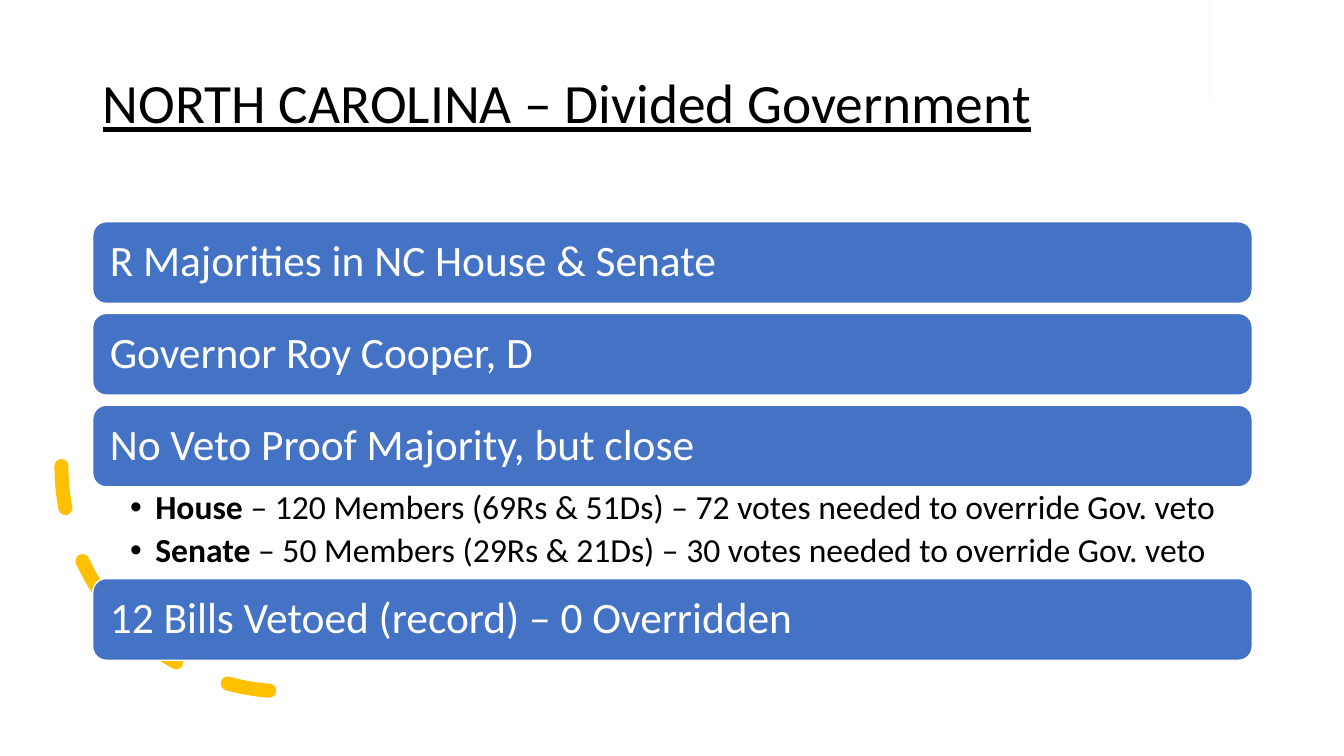
import math

import pptx
import pptx.dml.color
import pptx.enum.dml
import pptx.enum.shapes
import pptx.enum.text
import pptx.oxml
import pptx.util

Inches = pptx.util.Inches
Pt = pptx.util.Pt
ANCHOR = pptx.enum.text.MSO_ANCHOR
SHAPES = pptx.enum.shapes.MSO_SHAPE
GOLD, BLUE, WHITE, BLACK = "FFC000", "4472C4", "FFFFFF", "000000"

# Column and row grid in inches
LEFT, WIDTH = 0.92, 11.5
FIRST_ROW, ROW_PITCH, BAR_HEIGHT = 2.2, 0.91, 0.81


def color(hex_string):
    return pptx.dml.color.RGBColor.from_string(hex_string)


def write_text(paragraph, text, size, fill, bold=False, underline=False):
    paragraph.alignment = pptx.enum.text.PP_ALIGN.LEFT
    paragraph.line_spacing = 0.9
    paragraph.space_before = Pt(0)
    run = paragraph.add_run()
    run.text = text
    run.font.name = "Calibri"
    run.font.size = Pt(size)
    run.font.bold = bold
    run.font.underline = underline
    run.font.color.rgb = color(fill)


presentation = pptx.Presentation()
presentation.slide_width = Inches(13.33)
presentation.slide_height = Inches(7.5)
slide = presentation.slides.add_slide(presentation.slide_layouts[1])
title, body = slide.placeholders

# Title
title.left, title.top = Inches(LEFT), Inches(0.25)
title.width, title.height = Inches(WIDTH), Inches(1.6)
title.text_frame.vertical_anchor = ANCHOR.MIDDLE
title.text_frame.auto_size = pptx.enum.text.MSO_AUTO_SIZE.NONE
write_text(title.text_frame.paragraphs[0], "NORTH CAROLINA – Divided Government",
           size=39.6, fill=BLACK, underline=True)

# Gold disc cut off by the top edge
center_x, center_y, radius = 11.79, -0.11, 0.63
edge = math.asin(-center_y / radius)
steps = 60
angles = [edge + (math.pi - 2 * edge) * step / steps for step in range(steps + 1)]
points = [(center_x + radius * math.cos(angle), center_y + radius * math.sin(angle))
          for angle in angles]
builder = slide.shapes.build_freeform(*points[0], scale=Inches(1))
builder.add_line_segments(points[1:], close=True)
disc = builder.convert_to_shape()
disc.shadow.inherit = False
disc.fill.solid()
disc.fill.fore_color.rgb = color(GOLD)
disc.line.fill.background()

# Dashed arc in the lower left corner
arc = slide.shapes.add_shape(SHAPES.ARC, Inches(0.61), Inches(2.39), Inches(4.47), Inches(4.47))
arc.shadow.inherit = False
arc.rotation = 90
arc.element.spPr.xfrm.set("flipV", "1")
arc.fill.background()
arc.line.color.rgb = color(GOLD)
arc.line.width = Pt(10)
arc.line.dash_style = pptx.enum.dml.MSO_LINE.DASH
arc.line._get_or_add_ln().set("cap", "rnd")

# Blue bars: three rows, then one below the bullet list
list_top = FIRST_ROW + 2 * ROW_PITCH + BAR_HEIGHT
bars = [
    (FIRST_ROW, "R Majorities in NC House & Senate"),
    (FIRST_ROW + ROW_PITCH, "Governor Roy Cooper, D"),
    (FIRST_ROW + 2 * ROW_PITCH, "No Veto Proof Majority, but close"),
    (list_top + ROW_PITCH, "12 Bills Vetoed (record) – 0 Overridden"),
]
for top, text in bars:
    bar = slide.shapes.add_shape(SHAPES.ROUNDED_RECTANGLE, Inches(LEFT), Inches(top),
                                 Inches(WIDTH), Inches(BAR_HEIGHT))
    bar.shadow.inherit = False
    bar.fill.solid()
    bar.fill.fore_color.rgb = color(BLUE)
    bar.line.color.rgb = color(WHITE)
    bar.line.width = Pt(1)
    frame = bar.text_frame
    frame.vertical_anchor = ANCHOR.MIDDLE
    frame.margin_left = frame.margin_right = Inches(0.13)
    write_text(frame.paragraphs[0], text, size=31, fill=WHITE)

# Bullet list
body.left, body.top = Inches(LEFT), Inches(list_top)
body.width, body.height = Inches(WIDTH), Inches(ROW_PITCH)
frame = body.text_frame
frame.auto_size = pptx.enum.text.MSO_AUTO_SIZE.NONE
frame.vertical_anchor = ANCHOR.TOP
frame.margin_left, frame.margin_right = Inches(0.37), Inches(0.24)
frame.margin_top = frame.margin_bottom = Inches(0.04)
chambers = [
    ("House", " – 120 Members (69Rs & 51Ds) – 72 votes needed to override Gov. veto"),
    ("Senate", " – 50 Members (29Rs & 21Ds) – 30 votes needed to override Gov. veto"),
]
for index, (chamber, votes) in enumerate(chambers):
    paragraph = frame.add_paragraph() if index else frame.paragraphs[0]
    write_text(paragraph, chamber, size=24, fill=BLACK, bold=True)
    write_text(paragraph, votes, size=24, fill=BLACK)
    paragraph.space_after = Pt(4.5)
    properties = paragraph._p.get_or_add_pPr()
    properties.set("marL", str(Inches(0.25)))
    properties.set("indent", str(-Inches(0.25)))
    bullet = pptx.oxml.parse_xml(
        '<a:buChar xmlns:a="http://schemas.openxmlformats.org/drawingml/2006/main" char="•"/>')
    properties.append(bullet)

presentation.save("out.pptx")
